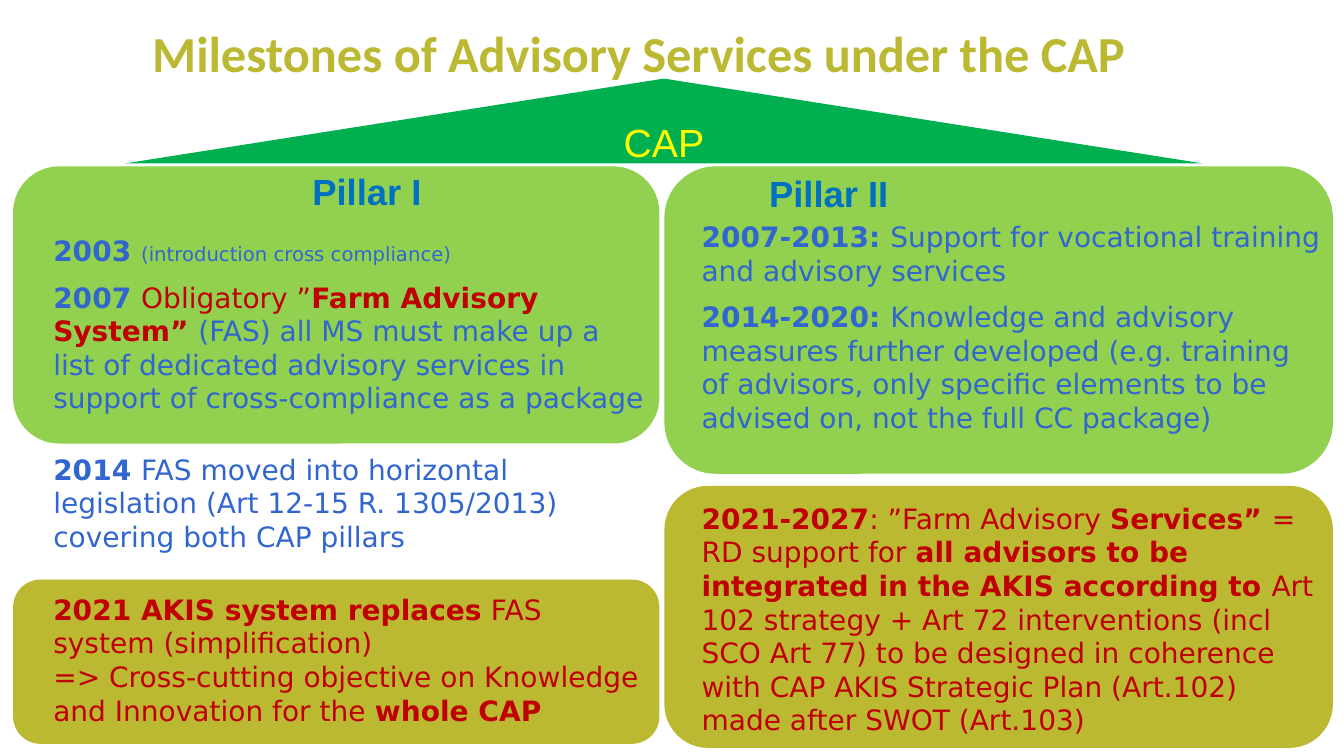
from pptx import Presentation
from pptx.dml.color import RGBColor
from pptx.enum.shapes import MSO_SHAPE
from pptx.enum.text import MSO_ANCHOR, MSO_AUTO_SIZE, PP_ALIGN
from pptx.util import Emu, Pt

PX = 9144  # 100 px to the inch

OLIVE = RGBColor(0xBB, 0xB8, 0x31)
LIME = RGBColor(0x92, 0xD0, 0x50)
GREEN = RGBColor(0x00, 0xB0, 0x50)
YELLOW = RGBColor(0xFF, 0xFF, 0x00)
HEADING_BLUE = RGBColor(0x00, 0x70, 0xC0)
TEXT_BLUE = RGBColor(0x31, 0x66, 0xCF)
RED = RGBColor(0xC0, 0x00, 0x00)

# Each paragraph: space after in points, then runs of (text, colour, bold, size)
PILLAR_1 = [
    (9, [("2003 ", TEXT_BLUE, True, 20),
         ("(introduction cross compliance)", TEXT_BLUE, False, 14)]),
    (27, [("2007 ", TEXT_BLUE, True, 20),
          ("Obligatory ”", RED, False, 20),
          ("Farm Advisory System” ", RED, True, 20),
          ("(FAS) all MS must make up a list of dedicated advisory services "
           "in support of cross-compliance as a package", TEXT_BLUE, False, 20)]),
    (28, [("2014 ", TEXT_BLUE, True, 20),
          ("FAS moved into horizontal legislation (Art 12-15 R. 1305/2013) "
           "covering both CAP pillars", TEXT_BLUE, False, 20)]),
    (0, [("2021 AKIS system replaces", RED, True, 20),
         (" FAS system (simplification)", RED, False, 20)]),
    (0, [("=> Cross-cutting objective on Knowledge and Innovation for the ",
          RED, False, 20),
         ("whole CAP", RED, True, 20)]),
]
PILLAR_2 = [
    (9, [("2007-2013: ", TEXT_BLUE, True, 20),
         ("Support for vocational training and advisory services",
          TEXT_BLUE, False, 20)]),
    (48, [("2014-2020: ", TEXT_BLUE, True, 20),
          ("Knowledge and advisory measures further developed (e.g. training "
           "of advisors, only specific elements to be advised on, not the full "
           "CC package)", TEXT_BLUE, False, 20)]),
    (0, [("2021-2027", RED, True, 20),
         (": ”Farm Advisory ", RED, False, 20),
         ("Services” ", RED, True, 20),
         ("= RD support for ", RED, False, 20),
         ("all advisors to be integrated in the AKIS according to ", RED, True, 20),
         ("Art 102 strategy + Art 72 interventions (incl SCO Art 77) to be "
          "designed in coherence with CAP AKIS Strategic Plan (Art.102) made "
          "after SWOT (Art.103)", RED, False, 20)]),
]


def emu(*lengths):
    return [Emu(n * PX) for n in lengths]


def add_run(p, text, font, size, color, bold=False):
    r = p.add_run()
    r.text = text
    r.font.name = font
    r.font.size = Pt(size)
    r.font.bold = bold
    r.font.color.rgb = color


def add_filled(s, kind, box, color):
    sp = s.shapes.add_shape(kind, *emu(*box))
    sp.shadow.inherit = False
    sp.fill.solid()
    sp.fill.fore_color.rgb = color
    sp.line.fill.background()
    return sp


def add_text_frame(s, box, anchor=MSO_ANCHOR.TOP):
    tf = s.shapes.add_textbox(*emu(*box)).text_frame
    tf.word_wrap = True
    tf.vertical_anchor = anchor
    return tf


def add_title(s, box):
    title = s.shapes.title
    title.left, title.top, title.width, title.height = emu(*box)
    tf = title.text_frame
    tf.auto_size = MSO_AUTO_SIZE.NONE
    tf.vertical_anchor = MSO_ANCHOR.TOP
    p = tf.paragraphs[0]
    p.alignment = PP_ALIGN.LEFT
    add_run(p, "Milestones of Advisory Services under the CAP",
            "Calibri", 36, OLIVE, True)


def add_roof(s, box):
    tf = add_filled(s, MSO_SHAPE.ISOSCELES_TRIANGLE, box, GREEN).text_frame
    tf.vertical_anchor = MSO_ANCHOR.MIDDLE
    p = tf.paragraphs[0]
    p.alignment = PP_ALIGN.CENTER
    add_run(p, "CAP", "Arial", 28, YELLOW)


def add_pillar(s, box, upper_height, lower_top, heading, heading_box,
               text_box, paragraphs):
    """Two panels in the box; the other places are offsets from its corner."""
    x, y, w, h = box
    # Panels
    add_filled(s, MSO_SHAPE.ROUNDED_RECTANGLE,
               (x, y + lower_top, w, h - lower_top), OLIVE)
    add_filled(s, MSO_SHAPE.ROUNDED_RECTANGLE, (x, y, w, upper_height), LIME)

    # Milestones, running over both panels
    dx, dy, tw, th = text_box
    tf = add_text_frame(s, (x + dx, y + dy, tw, th))
    for i, (space_after, runs) in enumerate(paragraphs):
        p = tf.add_paragraph() if i else tf.paragraphs[0]
        p.space_after = Pt(space_after)
        for text, color, bold, size in runs:
            add_run(p, text, "DejaVu Sans", size, color, bold)

    # Heading
    dx, dy, tw, th = heading_box
    tf = add_text_frame(s, (x + dx, y + dy, tw, th), MSO_ANCHOR.MIDDLE)
    add_run(tf.paragraphs[0], heading, "Arial", 26, HEADING_BLUE, True)


def main():
    prs = Presentation()
    prs.slide_width, prs.slide_height = emu(1333, 750)
    s = prs.slides.add_slide(prs.slide_layouts[5])
    add_title(s, (141, 17, 1192, 102))
    add_pillar(s, (13, 165, 641, 573), 275, 410, "Pillar I",
               (287, -10, 239, 68), (30, 62, 611, 505), PILLAR_1)
    add_pillar(s, (659, 165, 663, 577), 305, 317, "Pillar II",
               (94, -12, 270, 76), (27, 48, 636, 528), PILLAR_2)
    add_roof(s, (125, 78, 1067, 84))
    prs.save("out.pptx")


if __name__ == "__main__":
    main()
